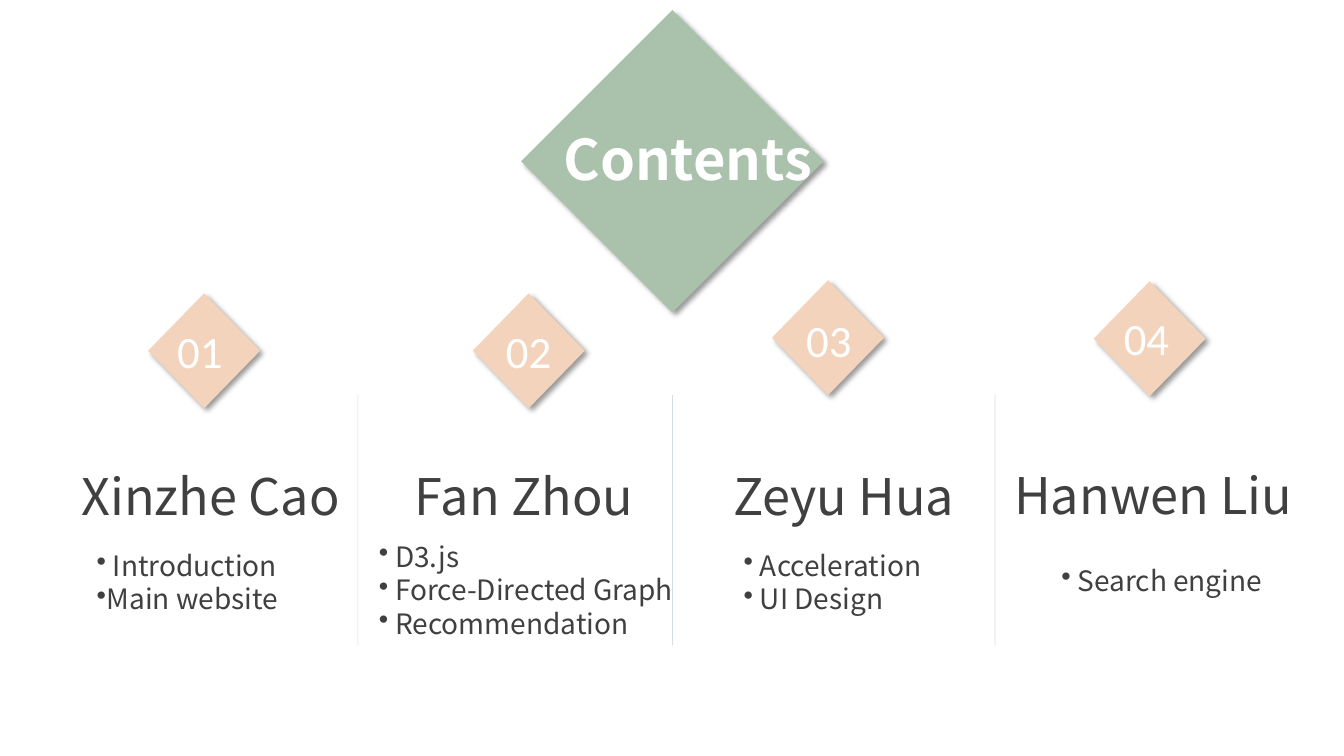
from dataclasses import dataclass

from lxml import etree
from pptx import Presentation
from pptx.dml.color import RGBColor
from pptx.enum.shapes import MSO_CONNECTOR, MSO_SHAPE
from pptx.enum.text import MSO_AUTO_SIZE, PP_ALIGN
from pptx.oxml.ns import qn
from pptx.util import Inches, Pt

DIAMOND = MSO_SHAPE.DIAMOND
STRAIGHT = MSO_CONNECTOR.STRAIGHT
LEFT, CENTER = PP_ALIGN.LEFT, PP_ALIGN.CENTER
FIT_SHAPE = MSO_AUTO_SIZE.SHAPE_TO_FIT_TEXT


@dataclass(frozen=True)
class Theme:
    sans: str = "Noto Sans CJK SC"
    digits: str = "Calibri"
    green: str = "AAC2AC"
    peach: str = "F3D3BC"
    navy: str = "093759"
    ink: str = "404040"
    white: str = "FFFFFF"
    black: str = "000000"
    title_size: int = 40
    name_size: int = 36
    number_size: int = 32
    topic_size: int = 20
    rule_width: float = 0.5
    rule_opacity: int = 17
    shadow_opacity: int = 40


@dataclass(frozen=True)
class Box:
    """Left, top, width and height in percent of the slide."""
    x: float
    y: float
    w: float
    h: float


@dataclass(frozen=True)
class Style:
    font: str
    size: int
    color: str
    bold: bool = False
    align: PP_ALIGN = LEFT
    bullet: bool = False


@dataclass(frozen=True)
class Speaker:
    number: str
    name: str
    topics: tuple[str, ...]
    badge: tuple[float, float]
    digits: tuple[float, float]
    heading: tuple[float, float]
    listing: tuple[float, float, float]


THEME = Theme()
TITLE = Style(THEME.sans, THEME.title_size, THEME.white, bold=True)
NAME = Style(THEME.sans, THEME.name_size, THEME.ink, align=CENTER)
NUMBER = Style(THEME.digits, THEME.number_size, THEME.white)
TOPIC = Style(THEME.sans, THEME.topic_size, THEME.ink, bullet=True)

BADGE_SIZE = (8.33, 15.2)
DIGITS_SIZE = (5.4, 8.53)
HEADING_SIZE = (22.5, 9.47)
TOPIC_PADDING, TOPIC_ROW = 1.33, 4.47
RULE_COLUMNS = (26.63, 50.03, 74.03)
RULE_TOP, RULE_BOTTOM = 52.27, 85.33

SPEAKERS = (
    Speaker("01", "Xinzhe Cao", (" Introduction", "Main website"),
            (11.03, 38.8), (12.45, 42.13), (4.43, 60.93), (6.45, 71.87, 22.88)),
    Speaker("02", "Fan Zhou", (" D3.js", " Force-Directed Graph", " Recommendation"),
            (35.18, 38.8), (36.9, 42.13), (27.75, 60.93), (27.45, 70.67, 28.88)),
    Speaker("03", "Zeyu Hua", (" Acceleration", " UI Design"),
            (57.45, 37.07), (59.25, 40.67), (51.53, 60.93), (54.6, 71.87, 15.53)),
    Speaker("04", "Hanwen Liu", (" Search engine",),
            (81.38, 37.2), (82.88, 40.4), (74.55, 60.8), (78.23, 73.87, 19.73)),
)

prs = Presentation()
prs.slide_width, prs.slide_height = Inches(13.33), Inches(7.5)
slide = prs.slides.add_slide(prs.slide_layouts[6])


def across(share: float) -> int:
    return round(prs.slide_width * share / 100)


def down(share: float) -> int:
    return round(prs.slide_height * share / 100)


def place(box: Box) -> tuple[int, int, int, int]:
    return across(box.x), down(box.y), across(box.w), down(box.h)


def set_opacity(color: etree._Element, percent: int) -> None:
    etree.SubElement(color, qn("a:alpha"), val=str(percent * 1000))


def add_diamond(box: Box, color: str) -> None:
    sp = slide.shapes.add_shape(DIAMOND, *place(box))
    sp.fill.solid()
    sp.fill.fore_color.rgb = RGBColor.from_string(color)
    sp.line.fill.background()
    sp.shadow.inherit = False
    effects = sp._element.spPr.find(qn("a:effectLst"))
    shadow = etree.SubElement(effects, qn("a:outerShdw"), blurRad=str(Pt(4)),
                              dist=str(Pt(3)), dir=str(45 * 60000),
                              algn="tl", rotWithShape="0")
    tint = etree.SubElement(shadow, qn("a:srgbClr"), val=THEME.black)
    set_opacity(tint, THEME.shadow_opacity)


def add_rule(column: float) -> None:
    x = across(column)
    line = slide.shapes.add_connector(STRAIGHT, x, down(RULE_TOP), x, down(RULE_BOTTOM))
    line.line.width = Pt(THEME.rule_width)
    line.line.color.rgb = RGBColor.from_string(THEME.navy)
    sp_pr = line._element.spPr
    set_opacity(sp_pr.find(".//" + qn("a:srgbClr")), THEME.rule_opacity)
    etree.SubElement(sp_pr, qn("a:effectLst"))


def add_text(box: Box, lines: tuple[str, ...], style: Style) -> None:
    tf = slide.shapes.add_textbox(*place(box)).text_frame
    tf.word_wrap = True
    tf.auto_size = FIT_SHAPE
    for i, text in enumerate(lines):
        p = tf.add_paragraph() if i else tf.paragraphs[0]
        p.add_run().text = text
        p.alignment = style.align
        p.font.name = style.font
        p.font.size = Pt(style.size)
        p.font.bold = style.bold
        p.font.color.rgb = RGBColor.from_string(style.color)
        if style.bullet:
            p_pr = p._p.get_or_add_pPr()
            p_pr.insert(0, etree.Element(qn("a:buChar"), char="•"))


def add_speaker(speaker: Speaker) -> None:
    add_diamond(Box(*speaker.badge, *BADGE_SIZE), THEME.peach)
    add_text(Box(*speaker.digits, *DIGITS_SIZE), (speaker.number,), NUMBER)
    add_text(Box(*speaker.heading, *HEADING_SIZE), (speaker.name,), NAME)
    height = TOPIC_PADDING + TOPIC_ROW * len(speaker.topics)
    add_text(Box(*speaker.listing, height), speaker.topics, TOPIC)


def main() -> None:
    add_diamond(Box(38.78, 1.33, 22.5, 40), THEME.green)
    add_text(Box(41.18, 15.87, 23.03, 10.27), ("Contents",), TITLE)
    for column in RULE_COLUMNS:
        add_rule(column)
    for speaker in SPEAKERS:
        add_speaker(speaker)
    prs.save("out.pptx")


if __name__ == "__main__":
    main()
